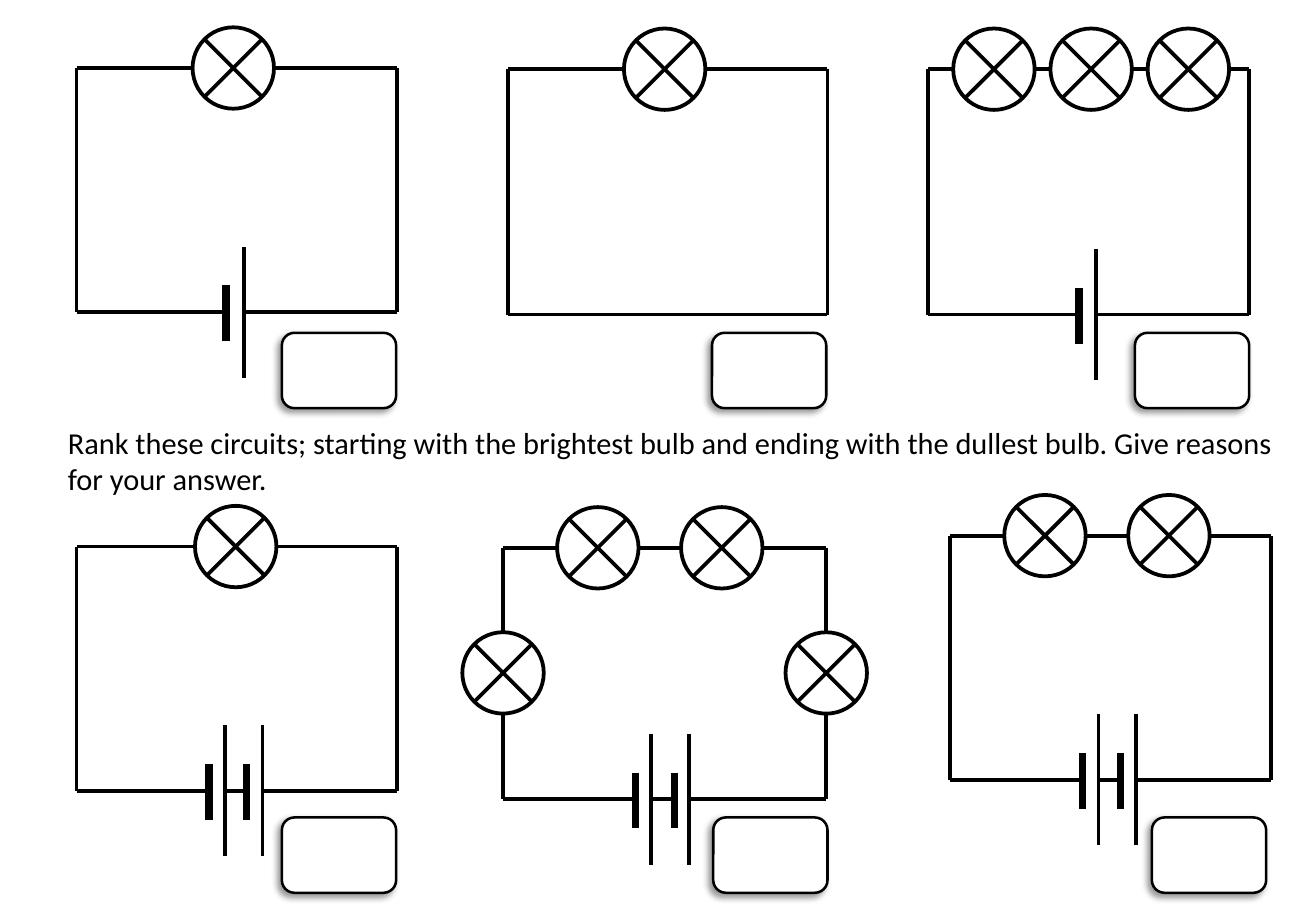
from dataclasses import dataclass

from lxml.etree import SubElement
from pptx import Presentation
from pptx.dml.color import RGBColor
from pptx.enum.shapes import MSO_CONNECTOR as Link, MSO_SHAPE as Preset
from pptx.oxml.ns import qn
from pptx.util import Inches, Pt


@dataclass(frozen=True)
class Theme:
    ink: RGBColor = RGBColor(0, 0, 0)
    paper: RGBColor = RGBColor(255, 255, 255)
    font: str = "Calibri"
    text_size: float = 18
    wire: float = 2.25
    short_plate: float = 4.5
    box_line: float = 1.5


@dataclass(frozen=True)
class Circuit:
    left: float
    right: float
    top: float
    bottom: float
    bulbs: tuple
    cells: tuple
    rank_box: tuple
    side_bulb_y: tuple = ()


BULB = 0.67
LONG_PLATE, SHORT_PLATE = 1.08, 0.46
RANK_BOX = (0.94, 0.62)
QUESTION = (
    "Rank these circuits; starting with the brightest bulb and ending "
    "with the dullest bulb. Give reasons for your answer."
)

CIRCUITS = (
    Circuit(0.63, 3.27, 0.56, 2.57, (1.92,), ((1.86, 2.01),), (2.32, 2.74)),
    Circuit(4.18, 6.81, 0.57, 2.59, (5.47,), (), (5.86, 2.74)),
    Circuit(7.64, 10.28, 0.57, 2.59, (8.18, 8.98, 9.78), ((8.88, 9.02),), (9.34, 2.74)),
    Circuit(0.63, 3.27, 4.5, 6.51, (1.94,), ((1.72, 1.85), (2.03, 2.16)), (2.32, 6.73)),
    Circuit(4.14, 6.8, 4.51, 6.58, (4.92, 5.94), ((5.23, 5.36), (5.55, 5.67)),
            (5.87, 6.73), (5.54,)),
    Circuit(7.82, 10.46, 4.41, 6.42, (8.6, 9.62), ((8.91, 9.04), (9.22, 9.35)),
            (9.48, 6.73)),
)


class Worksheet:
    def __init__(self, slide, theme):
        self.slide = slide
        self.theme = theme

    def question(self, wording, left, top, width, height):
        box = self.slide.shapes.add_textbox(*map(Inches, (left, top, width, height)))
        box.text_frame.word_wrap = True
        sentence = box.text_frame.paragraphs[0].add_run()
        sentence.text = wording
        style = {"name": self.theme.font, "size": Pt(self.theme.text_size)}
        for attribute, value in style.items():
            setattr(sentence.font, attribute, value)
        sentence.font.color.rgb = self.theme.ink

    def line(self, x1, y1, x2, y2, weight):
        stroke = self.slide.shapes.add_connector(
            Link.STRAIGHT, *map(Inches, (x1, y1, x2, y2)))
        stroke.line.color.rgb = self.theme.ink
        stroke.line.width = Pt(weight)
        SubElement(stroke._element.spPr, qn("a:effectLst"))

    def outline(self, preset, left, top, width, height, weight):
        figure = self.slide.shapes.add_shape(
            preset, *map(Inches, (left, top, width, height)))
        figure.fill.solid()
        figure.fill.fore_color.rgb = self.theme.paper
        figure.line.color.rgb = self.theme.ink
        figure.line.width = Pt(weight)
        figure.shadow.inherit = False
        return figure

    def bulb(self, x, y, rotation=0):
        lamp = self.outline(Preset.FLOWCHART_SUMMING_JUNCTION, x - BULB / 2,
                            y - BULB / 2, BULB, BULB, self.theme.wire)
        lamp.rotation = rotation

    def plate(self, x, y, length, weight):
        self.line(x, y - length / 2, x, y + length / 2, weight)

    def rank_box(self, left, top):
        answer = self.outline(Preset.ROUNDED_RECTANGLE, left, top, *RANK_BOX,
                              self.theme.box_line)
        effects = answer._element.spPr.find(qn("a:effectLst"))
        shadow = SubElement(effects, qn("a:outerShdw"), blurRad=str(Pt(4)),
                            dist=str(Pt(3)), dir=str(135 * 60000), rotWithShape="0")
        tint = SubElement(shadow, qn("a:srgbClr"), val=str(self.theme.ink))
        SubElement(tint, qn("a:alpha"), val="40000")

    def wire(self, start, end, level, gaps, vertical=False):
        stops = [start, *(edge for gap in gaps for edge in gap), end]
        for a, b in zip(stops[::2], stops[1::2]):
            ends = (level, a, level, b) if vertical else (a, level, b, level)
            self.line(*ends, self.theme.wire)

    def circuit(self, c):
        def around(centres):
            return [(centre - BULB / 2, centre + BULB / 2) for centre in centres]

        self.wire(c.left, c.right, c.top, around(c.bulbs))
        self.wire(c.left, c.right, c.bottom, c.cells)
        for x, rotation in ((c.left, 90), (c.right, 270)):
            self.wire(c.top, c.bottom, x, around(c.side_bulb_y), vertical=True)
            for y in c.side_bulb_y:
                self.bulb(x, y, rotation)
        for x in c.bulbs:
            self.bulb(x, c.top)
        for short_x, long_x in c.cells:
            self.plate(short_x, c.bottom + 0.01, SHORT_PLATE, self.theme.short_plate)
            self.plate(long_x, c.bottom, LONG_PLATE, self.theme.wire)
        self.rank_box(*c.rank_box)


def main():
    deck = Presentation()
    deck.slide_width, deck.slide_height = Inches(10.83), Inches(7.5)
    blank_layout = deck.slide_layouts[6]
    worksheet = Worksheet(deck.slides.add_slide(blank_layout), Theme())
    worksheet.question(QUESTION, 0.46, 3.44, 10.18, 0.71)
    for circuit in CIRCUITS:
        worksheet.circuit(circuit)
    deck.save("out.pptx")


if __name__ == "__main__":
    main()
